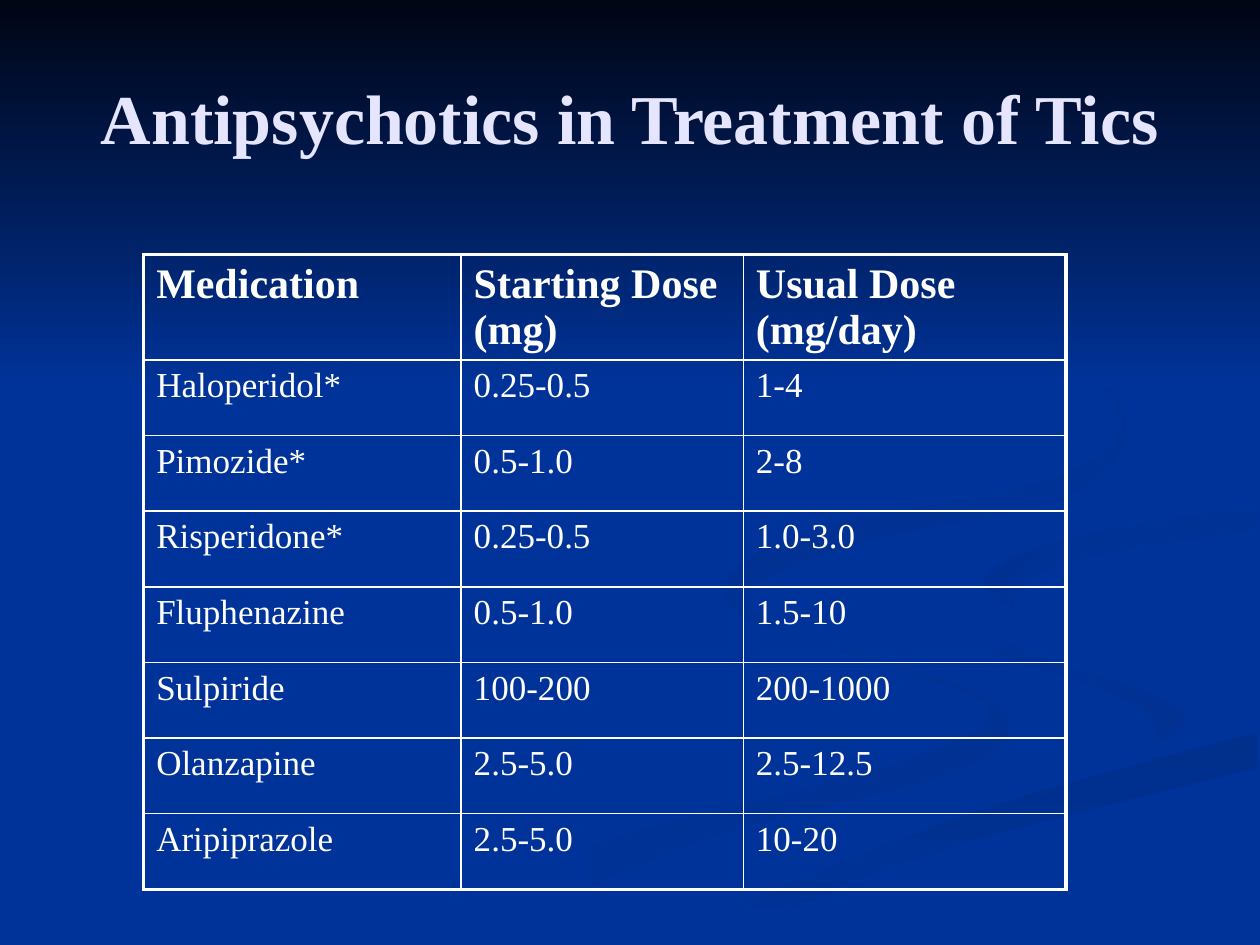
from lxml.etree import SubElement
from pptx import Presentation
from pptx.dml.color import RGBColor
from pptx.enum.shapes import MSO_SHAPE as Shape
from pptx.enum.text import MSO_ANCHOR as Anchor, PP_ALIGN as Align
from pptx.oxml.ns import qn
from pptx.util import Inches, Pt

FONT = "Times New Roman"
BLUE, WHITE, LAVENDER = "003399", "FFFFFF", "E5E5FF"

# Each ribbon: first colour, last colour, clockwise angle, edges as knots in inches
RIBBONS = [
    ("003399", "003193", 0, [
        [(5.75, 4.6), (6.14, 4.96), (7.15, 5.28), (7.86, 5.56), (7.99, 5.85),
         (7.4, 6.18), (5.64, 6.65), (3.61, 7.49)],
        [(3, 7.49), (4.58, 6.74), (7.14, 6.05), (7.86, 5.66), (7.28, 5.35),
         (5.93, 4.91), (5.72, 4.64)]]),
    ("003399", "003193", 45, [
        [(7.24, 4.64), (7.58, 4.98), (8.7, 5.3), (9.43, 5.7), (8.94, 6.05)],
        [(8.94, 6.05), (9.18, 5.81), (8.8, 5.49), (7.66, 5.12), (7.24, 4.64)]]),
    ("002F8C", BLUE, 90, [
        [(9.98, 5.81), (7.64, 6.47), (5.03, 7.49)],
        [(5.71, 7.49), (7.22, 6.82), (9.98, 6.09)]]),
    (BLUE, BLUE, 0, [
        [(9.99, 3.87), (8.08, 4.17), (7.25, 4.64), (8.12, 5.15), (9.43, 5.7),
         (8.12, 6.25), (4.77, 7.49)],
        [(5.19, 7.47), (7.65, 6.47), (9.99, 5.81)],
        [(9.99, 5.38), (8.32, 4.98), (7.81, 4.63), (8.65, 4.24), (9.99, 4.02)]]),
    ("003091", BLUE, 45, [
        [(9.98, 4.02), (8.49, 4.27), (7.81, 4.6), (8.26, 4.96)],
        [(8.26, 4.96), (8.05, 4.72), (8.59, 4.43), (9.98, 4.2)]]),
    ("002F8E", BLUE, 45, [
        [(7.62, 2.33), (8.64, 2.91), (8.94, 3.44), (8.41, 3.96), (6.83, 4.3),
         (5.93, 4.7), (6.22, 5)],
        [(6.22, 5), (5.77, 4.62), (6.49, 4.2), (8.3, 3.82), (8.89, 3.35),
         (8.26, 2.66), (7.62, 2.33)]]),
]

HEADERS = ["Medication", "Starting Dose (mg)", "Usual Dose (mg/day)"]
DOSES = [
    ["Haloperidol*", "0.25-0.5", "1-4"],
    ["Pimozide*", "0.5-1.0", "2-8"],
    ["Risperidone*", "0.25-0.5", "1.0-3.0"],
    ["Fluphenazine", "0.5-1.0", "1.5-10"],
    ["Sulpiride", "100-200", "200-1000"],
    ["Olanzapine", "2.5-5.0", "2.5-12.5"],
    ["Aripiprazole", "2.5-5.0", "10-20"],
]


def color(value):
    return RGBColor.from_string(value)


def smooth(knots, steps=6):
    """Points of a Catmull-Rom curve through the knots, in EMU."""
    padded = [knots[0], *knots, knots[-1]]
    points = []
    for a, b, c, d in zip(padded, padded[1:], padded[2:], padded[3:]):
        for step in range(steps):
            t = step / steps
            points.append(tuple(
                Inches(q + t / 2 * (r - p + t * (2 * p - 5 * q + 4 * r - s
                                                 + t * (3 * q - p - 3 * r + s))))
                for p, q, r, s in zip(a, b, c, d)))
    return points + [tuple(Inches(value) for value in knots[-1])]


def paint(shape, first, last, angle):
    """Fill a decoration with a gradient, or plainly if both ends match."""
    shape.shadow.inherit = False
    shape.line.fill.background()
    if first == last:
        shape.fill.solid()
        shape.fill.fore_color.rgb = color(first)
        return
    shape.fill.gradient()
    shape.fill.gradient_angle = (360 - angle) % 360
    for stop, value in zip(shape.fill.gradient_stops, (first, last)):
        stop.color.rgb = color(value)


def style_text(frame, size, value, bold):
    for para in frame.paragraphs:
        for span in para.runs:
            span.font.name = FONT
            span.font.size = Pt(size)
            span.font.bold = bold
            span.font.color.rgb = color(value)


def add_backdrop(page, width, height):
    page.background.fill.solid()
    page.background.fill.fore_color.rgb = color(BLUE)
    for first, last, angle, edges in RIBBONS:
        outline = [point for edge in edges for point in smooth(edge)]
        builder = page.shapes.build_freeform(*outline[0])
        builder.add_line_segments(outline[1:], close=True)
        paint(builder.convert_to_shape(), first, last, angle)
    # Night sky fading into the blue
    sky = page.shapes.add_shape(Shape.RECTANGLE, 0, 0, width, height)
    paint(sky, "000514", BLUE, 90)


def add_title(page, text, left, top, width, height):
    title = page.shapes.title
    title.left, title.top, title.width, title.height = left, top, width, height
    frame = title.text_frame
    frame.text = text
    frame.word_wrap = True
    frame.vertical_anchor = Anchor.MIDDLE
    frame.paragraphs[0].alignment = Align.CENTER
    style_text(frame, 40, LAVENDER, True)
    # Bring the title in front of the backdrop
    title.element.getparent().append(title.element)


def set_borders(cell, outer_sides):
    """Draw thin inner rules and thick rules on the table's outer sides."""
    props = cell._tc.get_or_add_tcPr()
    for index, side in enumerate("LRTB"):
        width = Pt(2.25 if side in outer_sides else 1)
        line = props.makeelement(qn(f"a:ln{side}"), {"w": str(width)})
        fill = SubElement(line, qn("a:solidFill"))
        SubElement(fill, qn("a:srgbClr"), val=WHITE)
        props.insert(index, line)


def add_dose_table(page, left, top, widths, heights):
    rows = [HEADERS] + DOSES
    last_row, last_column = len(rows) - 1, len(HEADERS) - 1
    frame = page.shapes.add_table(len(rows), len(HEADERS), left, top, sum(widths), sum(heights))
    table = frame.table
    table.first_row = table.horz_banding = False
    for column, width in zip(table.columns, widths):
        column.width = width
    for row, height in zip(table.rows, heights):
        row.height = height
    for r, texts in enumerate(rows):
        for c, text in enumerate(texts):
            cell = table.cell(r, c)
            cell.text = text
            cell.fill.background()
            style_text(cell.text_frame, 20 if r else 24, WHITE, r == 0)
            edges = {"L": c == 0, "R": c == last_column, "T": r == 0, "B": r == last_row}
            set_borders(cell, [side for side, outer in edges.items() if outer])


def main():
    deck = Presentation()
    deck.slide_width, deck.slide_height = Inches(10), Inches(7.5)
    width, height = deck.slide_width, deck.slide_height
    page = deck.slides.add_slide(deck.slide_layouts[5])
    add_backdrop(page, width, int(height * 0.41))
    add_title(page, "Antipsychotics in Treatment of Tics",
              int(width * 0.05), int(height * 0.04), int(width * 0.9), Inches(1.25))
    add_dose_table(page, Inches(1.14), Inches(2.02),
                   [Inches(w) for w in (2.52, 2.24, 2.56)],
                   [Inches(0.81)] + [Inches(0.6)] * len(DOSES))
    deck.save("out.pptx")


if __name__ == "__main__":
    main()
